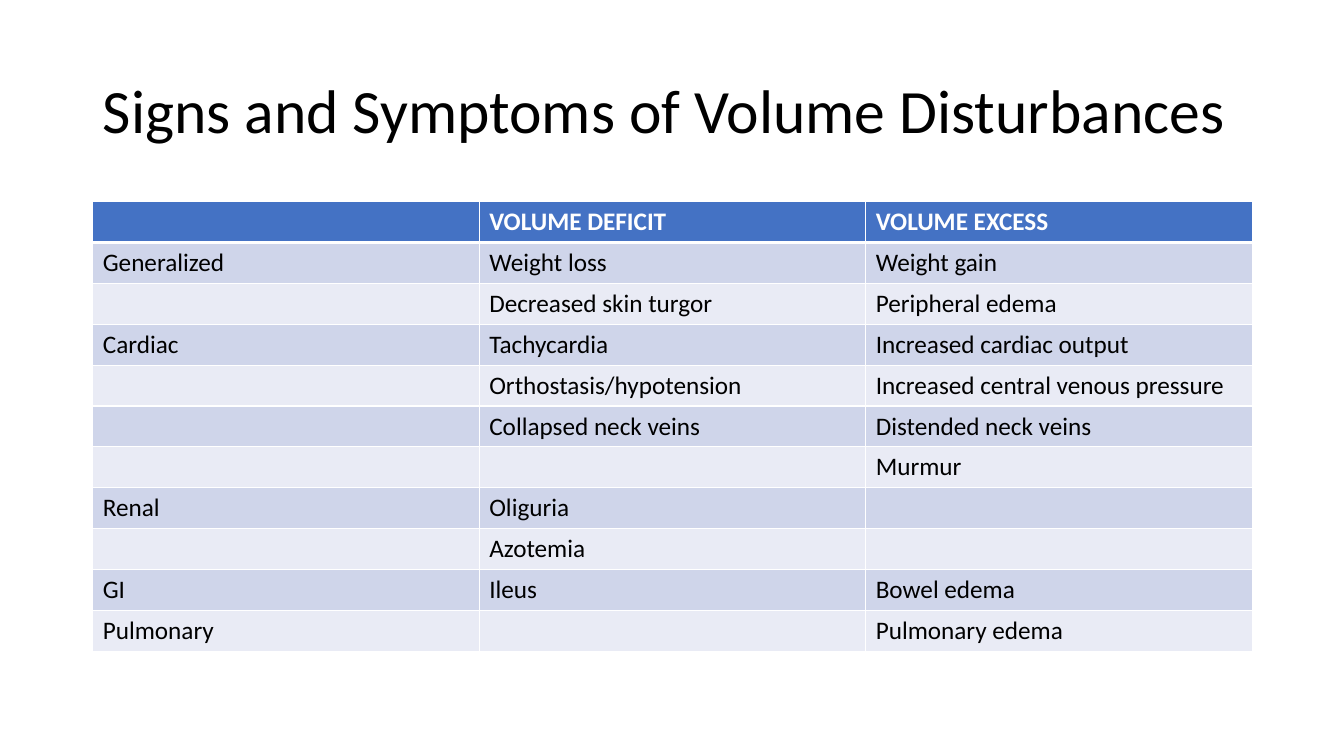
from dataclasses import dataclass

import lxml.etree
import pptx
import pptx.dml.color
import pptx.enum.text
import pptx.oxml.ns
import pptx.table
import pptx.util

Inches = pptx.util.Inches
RGB = pptx.dml.color.RGBColor
qn = pptx.oxml.ns.qn


@dataclass(frozen=True)
class Theme:
    font: str = "Calibri"
    dark: str = "000000"
    light: str = "FFFFFF"
    head: str = "4472C4"
    odd: str = "CFD5EA"
    even: str = "E9EBF5"
    title: int = 44
    body: int = 18
    thin: int = 1
    thick: int = 3


@dataclass(frozen=True)
class Sign:
    system: str
    deficit: str
    excess: str


THEME = Theme()
LEFT, WIDTH = 0.92, 11.5
TOP, HEIGHT = 2, 4.46
SIGNS = [
    Sign("", "VOLUME DEFICIT", "VOLUME EXCESS"),
    Sign("Generalized", "Weight loss", "Weight gain"),
    Sign("", "Decreased skin turgor", "Peripheral edema"),
    Sign("Cardiac", "Tachycardia", "Increased cardiac output"),
    Sign("", "Orthostasis/hypotension", "Increased central venous pressure"),
    Sign("", "Collapsed neck veins", "Distended neck veins"),
    Sign("", "", "Murmur"),
    Sign("Renal", "Oliguria", ""),
    Sign("", "Azotemia", ""),
    Sign("GI", "Ileus", "Bowel edema"),
    Sign("Pulmonary", "", "Pulmonary edema"),
]


def style(frame, size: int, color: str, bold: bool = False) -> None:
    for para in frame.paragraphs:
        para.alignment = pptx.enum.text.PP_ALIGN.LEFT
        for run in para.runs:
            run.font.name = THEME.font
            run.font.size = pptx.util.Pt(size)
            run.font.bold = bold
            run.font.color.rgb = RGB.from_string(color)


def border(cell: pptx.table._Cell, row: int) -> None:
    """Rule all four sides, with a thick line under the header."""
    props = cell._tc.get_or_add_tcPr()
    heavy = {0: "lnB", 1: "lnT"}.get(row)
    for side in ("lnL", "lnR", "lnT", "lnB"):
        width = THEME.thick if side == heavy else THEME.thin
        line = lxml.etree.SubElement(
            props, qn(f"a:{side}"), w=str(pptx.util.Pt(width)))
        fill = lxml.etree.SubElement(line, qn("a:solidFill"))
        lxml.etree.SubElement(fill, qn("a:srgbClr"), val=THEME.light)


def paint(cell: pptx.table._Cell, text: str, row: int) -> None:
    head = row == 0
    cell.text_frame.text = text
    style(cell.text_frame, THEME.body, THEME.light if head else THEME.dark, head)
    border(cell, row)
    color = THEME.head if head else THEME.odd if row % 2 else THEME.even
    cell.fill.solid()
    cell.fill.fore_color.rgb = RGB.from_string(color)


def add_title(slide) -> None:
    title = slide.shapes.title
    title.left, title.top = Inches(LEFT), Inches(0.4)
    title.width, title.height = Inches(WIDTH), Inches(1.45)
    frame = title.text_frame
    frame.text = "Signs and Symptoms of Volume Disturbances"
    frame.word_wrap = True
    frame.vertical_anchor = pptx.enum.text.MSO_ANCHOR.MIDDLE
    frame.paragraphs[0].line_spacing = 0.9
    style(frame, THEME.title, THEME.dark)


def add_signs(slide) -> None:
    table = slide.shapes.add_table(
        len(SIGNS), 3, Inches(LEFT), Inches(TOP),
        Inches(WIDTH), Inches(HEIGHT)).table
    for row, sign in enumerate(SIGNS):
        for col, text in enumerate((sign.system, sign.deficit, sign.excess)):
            paint(table.cell(row, col), text, row)


def main() -> None:
    deck = pptx.Presentation()
    deck.slide_width, deck.slide_height = Inches(13.33), Inches(7.5)
    slide = deck.slides.add_slide(deck.slide_layouts[5])
    add_title(slide)
    add_signs(slide)
    deck.save("out.pptx")


if __name__ == "__main__":
    main()
